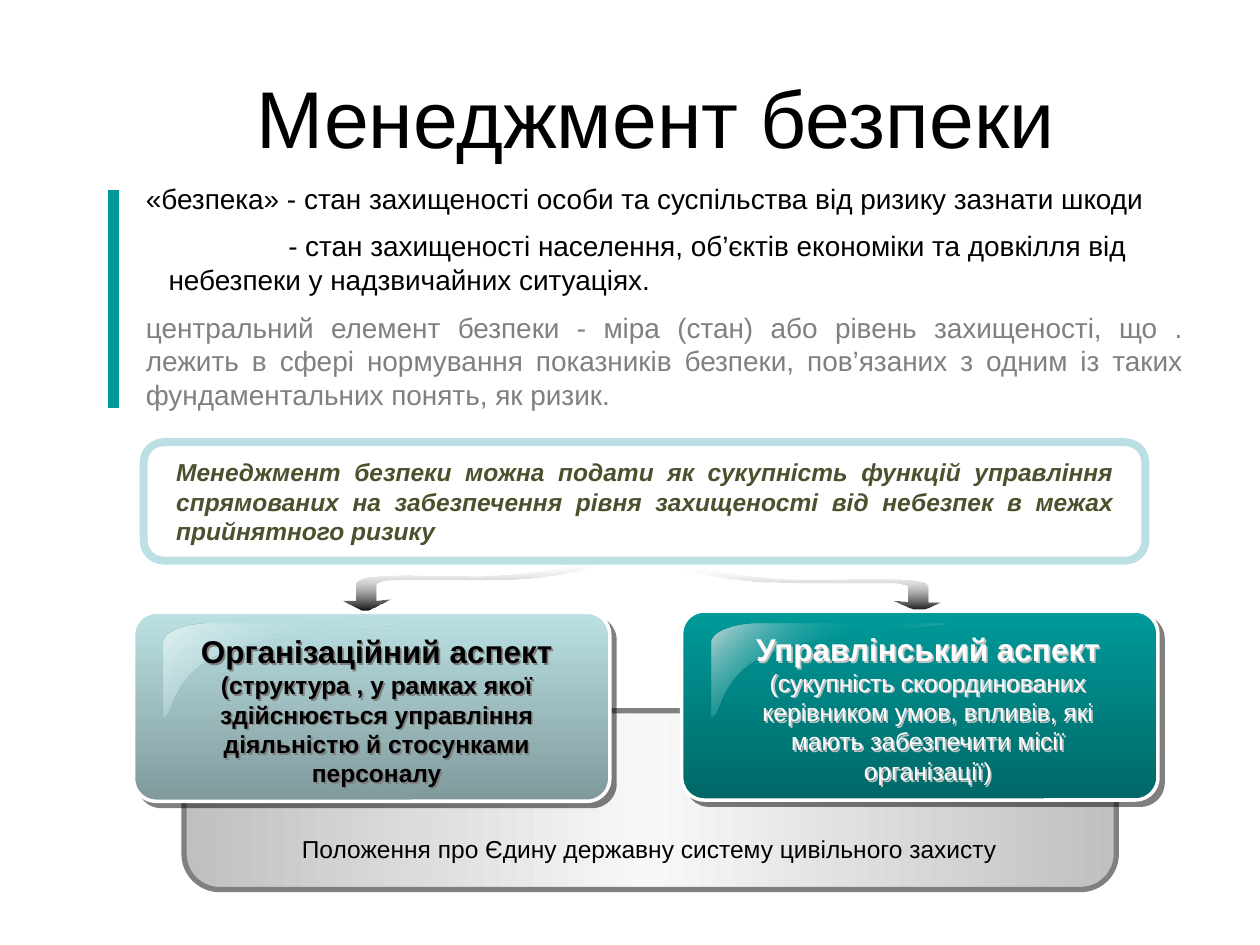
from lxml import etree
from pptx import Presentation
from pptx.dml.color import RGBColor
from pptx.enum import shapes, text
from pptx.oxml import ns
from pptx.util import Inches, Pt

COLORS = {
    "black": "000000", "white": "FFFFFF", "grey": "808080", "teal": "009999",
    "teal_dark": "006868", "teal_gloss": "BFD5D5", "pale": "BBE0E3",
    "pale_dark": "809A9C", "pale_gloss": "E1F1F2", "olive": "49512D",
    "silver": "C0C0C0", "light": "F8F8F8",
}

# Content: a paragraph is (text, size, colour, options)
TITLE = [("Менеджмент безпеки", 46, "black", {})]
DEFINITIONS = [
    ("«безпека» - стан захищеності особи та суспільства від ризику зазнати шкоди",
     16, "black", {"align": "LEFT"}),
    ("- стан захищеності населення, об’єктів економіки та довкілля від "
     "небезпеки у надзвичайних ситуаціях.",
     16, "black", {"align": "LEFT", "margin": 0.18, "indent": 0.95, "before": 8}),
    ("центральний елемент безпеки - міра (стан) або рівень захищеності, що . "
     "лежить в сфері нормування показників безпеки, пов’язаних з одним із таких "
     "фундаментальних понять, як ризик.",
     16, "grey", {"align": "JUSTIFY", "before": 8}),
]
SUMMARY = [
    ("Менеджмент безпеки можна подати як сукупність функцій управління "
     "спрямованих на забезпечення рівня захищеності від небезпек в межах "
     "прийнятного ризику",
     14, "olive", {"align": "JUSTIFY", "bold": True, "italic": True}),
]
BASIS = [("Положення про Єдину державну систему цивільного захисту", 14, "black", {})]
CARDS = [
    {"at": (1.06, 4.86), "text_at": (1.14, 4.97, 3.7, 1.33),
     "fill": ("pale", "pale_dark"), "gloss": "pale_gloss", "text_shadow": "grey",
     "paras": [
         ("Організаційний аспект", 18, "black", {"bold": True}),
         ("(структура , у рамках якої здійснюється управління діяльністю й "
          "стосунками персоналу", 14, "black", {"bold": True})]},
    {"at": (5.41, 4.85), "text_at": (5.71, 4.95, 3.31, 1.33),
     "fill": ("teal", "teal_dark"), "gloss": "teal_gloss", "text_shadow": "silver",
     "paras": [
         ("Управлінський аспект", 18, "white", {"bold": True}),
         ("(сукупність скоординованих керівником умов, впливів, які мають "
          "забезпечити місії організації)", 14, "white", {})]},
]

# Outlines: a start point, then segments of one point (line) or three (curve)
ARROW = [[(0, 0)], [(0, 0), (0.24, 0.14), (1.08, 0.13)],
         [(1.36, 0.13), (1.64, 0.13), (1.64, 0.13)],
         [(1.64, 0.13), (1.81, 0.13), (1.81, 0.16)],
         [(1.81, 0.21), (1.81, 0.27), (1.81, 0.27)],
         [(1.69, 0.26)], [(1.9, 0.35)], [(2.08, 0.27)], [(1.97, 0.27)],
         [(1.97, 0.27), (1.97, 0.21), (1.97, 0.15)],
         [(1.95, 0.1), (1.75, 0.1), (1.75, 0.1)],
         [(1.58, 0.09), (1.34, 0.1), (0.95, 0.1)],
         [(0.32, 0.08), (0.2, 0), (0.2, 0)], [(0, 0)]]
GLOSS = [[(0.37, 0)], [(0.17, 0), (0, 0.07), (0, 0.15)], [(0, 0.74)],
         [(0.09, 0.75), (0.04, 0.39), (0.51, 0.22)],
         [(0.98, 0.05), (1.88, 0.04), (1.86, 0)], [(0.37, 0)]]


def rgb(name):
    return RGBColor.from_string(COLORS[name])


def add_shadow(sp, name, dist, alpha):
    sp.shadow.inherit = False
    old = sp._element.spPr.find(ns.qn("a:effectLst"))
    old.getparent().replace(old, etree.fromstring(
        f'<a:effectLst {ns.nsdecls("a")}><a:outerShdw dist="{Pt(dist)}" '
        f'dir="2700000" algn="ctr" rotWithShape="0"><a:srgbClr val="{COLORS[name]}">'
        f'<a:alpha val="{alpha * 1000}"/></a:srgbClr></a:outerShdw></a:effectLst>'))


def gradient(sp, stops, angle):
    """Fill with stops of (position %, colour, opacity %)."""
    sp.fill.solid()
    old = sp._element.spPr.find(ns.qn("a:solidFill"))
    gs = "".join(f'<a:gs pos="{pos * 1000}"><a:srgbClr val="{COLORS[c]}">'
                 f'<a:alpha val="{alpha * 1000}"/></a:srgbClr></a:gs>'
                 for pos, c, alpha in stops)
    old.getparent().replace(old, etree.fromstring(
        f'<a:gradFill {ns.nsdecls("a")} rotWithShape="1"><a:gsLst>{gs}</a:gsLst>'
        f'<a:lin ang="{angle * 60000}" scaled="0"/></a:gradFill>'))


def add_text(box, paras, anchor="TOP"):
    sp = slide.shapes.add_textbox(*map(Inches, box))
    tf = sp.text_frame
    tf.word_wrap = True
    tf.vertical_anchor = text.MSO_ANCHOR[anchor]
    for i, (words, size, color, opt) in enumerate(paras):
        p = tf.paragraphs[0] if i == 0 else tf.add_paragraph()
        p.alignment = text.PP_ALIGN[opt.get("align", "CENTER")]
        p.space_before = Pt(opt.get("before", 0))
        if "indent" in opt:
            pPr = p._p.get_or_add_pPr()
            pPr.set("marL", str(Inches(opt["margin"])))
            pPr.set("indent", str(Inches(opt["indent"])))
        r = p.add_run()
        r.text = words
        r.font.size, r.font.name = Pt(size), "Arial"
        r.font.bold, r.font.italic = opt.get("bold", False), opt.get("italic", False)
        r.font.color.rgb = rgb(color)
    return sp


def add_round_rect(box, radius, line, width):
    sp = slide.shapes.add_shape(shapes.MSO_SHAPE.ROUNDED_RECTANGLE, *map(Inches, box))
    sp.adjustments[0] = radius
    sp.shadow.inherit = False
    sp.line.color.rgb, sp.line.width = rgb(line), Pt(width)
    return sp


def add_outline(outline, place):
    """Draw an outline, with place mapping its points to slide inches."""
    segs = [[tuple(map(Inches, place(x, y))) for x, y in seg] for seg in outline]
    builder = slide.shapes.build_freeform(*segs[0][0], scale=1.0)
    builder.add_line_segments([seg[-1] for seg in segs[1:]], close=True)
    sp = builder.convert_to_shape()
    sp.shadow.inherit = False
    sp.line.fill.background()

    # Turn the three-point segments into true curves
    path = next(sp._element.iter(ns.qn("a:path")))
    for child in list(path):
        path.remove(child)
    for i, seg in enumerate(segs):
        tag = "a:moveTo" if i == 0 else "a:lnTo" if len(seg) == 1 else "a:cubicBezTo"
        node = etree.SubElement(path, ns.qn(tag))
        for x, y in seg:
            etree.SubElement(node, ns.qn("a:pt"), x=str(x - sp.left), y=str(y - sp.top))
    etree.SubElement(path, ns.qn("a:close"))
    return sp


prs = Presentation()
prs.slide_width, prs.slide_height = Inches(10), Inches(7.5)
slide = prs.slides.add_slide(prs.slide_layouts[6])

# Base panel behind the cards, a tall shape turned on its side
base = add_round_rect((4.45, 2.65, 1.42, 7.4), 0.2, "grey", 3)
base.rotation = 90
gradient(base, [(0, "silver", 100), (50, "light", 100), (100, "silver", 100)], 90)

# Title and side bar
add_text((0.9, 0.3, 8.6, 1.25), TITLE, "MIDDLE")
bar = slide.shapes.add_connector(shapes.MSO_CONNECTOR.STRAIGHT,
                                 *map(Inches, (0.9, 1.51, 0.9, 3.24)))
bar.line.color.rgb, bar.line.width = rgb("teal"), Pt(6)
etree.SubElement(bar._element.spPr, ns.qn("a:effectLst"))

# Curved arrows; the left one is mirrored and a little taller
for place in (lambda x, y: (5.39 + x, 4.5 + y),
              lambda x, y: (4.8 - x, 4.46 + y * 0.39 / 0.35)):
    gradient(add_outline(ARROW, place), [(0, "white", 0), (100, "black", 100)], 90)

# Cards with gloss and text
for card in CARDS:
    left, top = card["at"]
    start, end = card["fill"]
    sp = add_round_rect((left, top, 3.78, 1.5), 0.12, "white", 2)
    gradient(sp, [(0, start, 100), (100, end, 100)], 90)
    add_shadow(sp, "black", 4.2, 50)
    gloss = add_outline(GLOSS, lambda x, y: (left + 0.24 + x, 4.95 + y))
    gradient(gloss, [(0, card["gloss"], 100), (50, start, 0),
                     (100, card["gloss"], 100)], 45)
    add_shadow(add_text(card["text_at"], card["paras"]), card["text_shadow"], 1.4, 100)

# Summary frame and remaining text
frame = add_round_rect((1.14, 3.51, 7.95, 0.94), 0.17, "pale", 4.5)
frame.fill.solid()
frame.fill.fore_color.rgb = rgb("white")
add_text((1.3, 3.58, 7.64, 0.8), SUMMARY)
add_text((1.69, 6.57, 6.93, 0.33), BASIS)
add_text((1.06, 1.39, 8.43, 1.97), DEFINITIONS)

prs.save("out.pptx")
